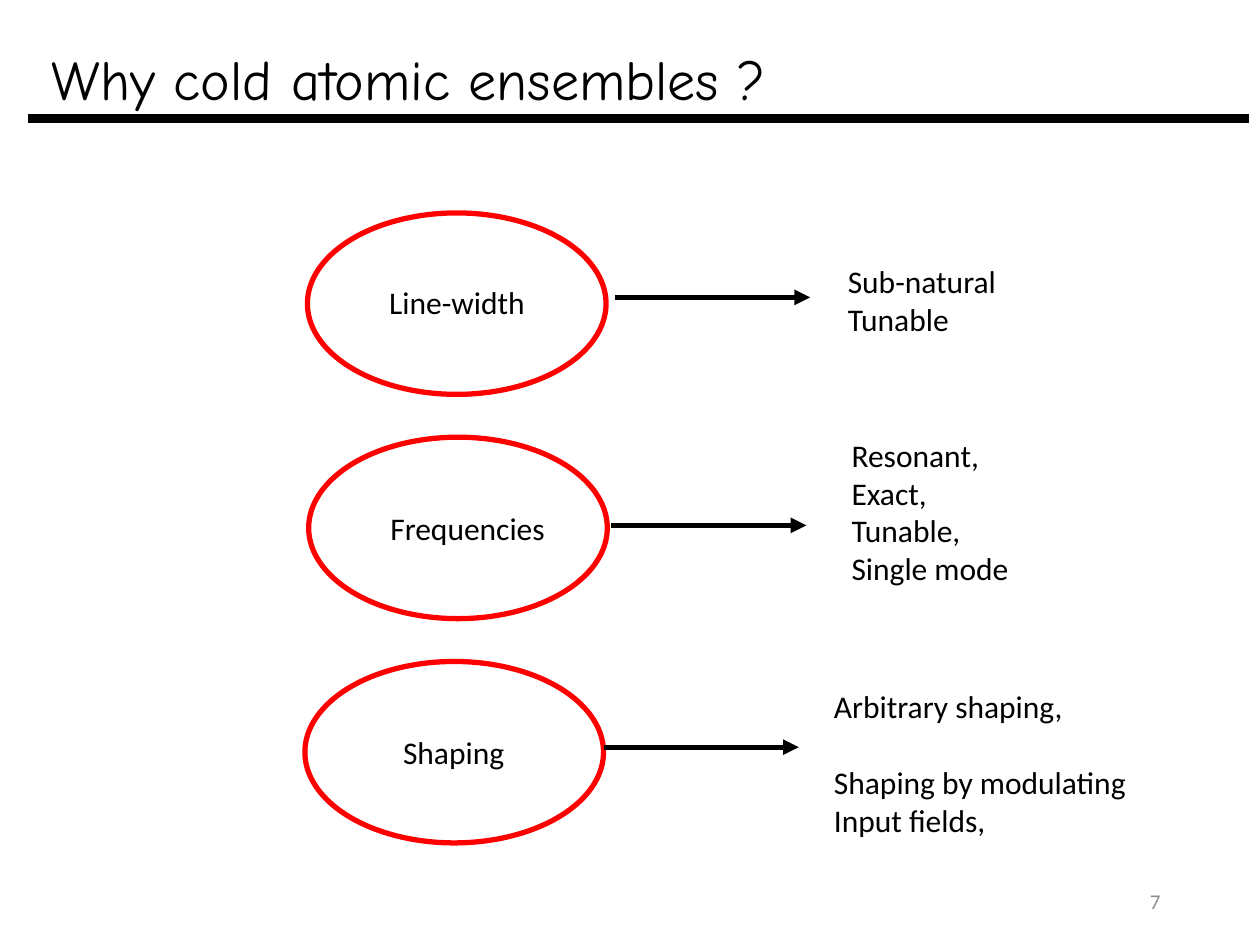
"""Build the slide that lists the advantages of cold atomic ensembles."""
from lxml.etree import SubElement
from pptx import Presentation
from pptx.dml.color import RGBColor
from pptx.enum.shapes import MSO_CONNECTOR, MSO_SHAPE
from pptx.enum.text import MSO_ANCHOR, MSO_AUTO_SIZE, PP_ALIGN
from pptx.oxml.ns import qn
from pptx.util import Pt

PX = 9144
COLORS = {"black": "000000", "red": "FF0000", "gray": "8C8C8C"}
TITLE = {"name": "Comic Neue", "size": Pt(32), "bold": False}
BODY = {"name": "Calibri", "size": Pt(18)}
NUMBER = {"name": "Calibri", "size": Pt(12)}
LINE_GAP = Pt(22)


def write_text(shape, box, lines, font, color="black", align=PP_ALIGN.LEFT,
               anchor=MSO_ANCHOR.TOP, grow=True):
    shape.left, shape.top, shape.width, shape.height = [value * PX for value in box]
    frame = shape.text_frame
    frame.text = "\n".join(lines)
    frame.word_wrap = not grow
    frame.auto_size = MSO_AUTO_SIZE.SHAPE_TO_FIT_TEXT if grow else MSO_AUTO_SIZE.NONE
    frame.vertical_anchor = anchor
    for paragraph in frame.paragraphs:
        paragraph.alignment = align
        run_font = paragraph.runs[0].font
        for name, value in font.items():
            setattr(run_font, name, value)
        run_font.color.rgb = RGBColor.from_string(COLORS[color])
    return frame


def add_line(shapes, left, right, y, width, arrow=False):
    line = shapes.add_connector(MSO_CONNECTOR.STRAIGHT, left * PX, y * PX, right * PX, y * PX)
    line.line.color.rgb = RGBColor.from_string(COLORS["black"])
    line.line.width = Pt(width)
    if arrow:
        SubElement(line.line._get_or_add_ln(), qn("a:tailEnd"), type="triangle")
    SubElement(line._element.spPr, qn("a:effectLst"))


presentation = Presentation()
presentation.slide_width = 1000 * PX
presentation.slide_height = 750 * PX
slide = presentation.slides.add_slide(presentation.slide_layouts[5])
shapes = slide.shapes

write_text(shapes.title, (31, 30, 632, 64), ["Why cold atomic ensembles ?"], TITLE)
add_line(shapes, 22, 991, 94, 4.75)

topics = [
    {"label": "Line-width", "ellipse_left": 244, "label_box": (299, 220, 135, 40),
     "arrow": (488, 236), "details_box": (663, 203, 145, 71),
     "details": ["Sub-natural", "Tunable"]},
    {"label": "Frequencies", "ellipse_left": 245, "label_box": (300, 399, 156, 40),
     "arrow": (485, 417), "details_box": (666, 341, 152, 162),
     "details": ["Resonant,", "Exact,", "Tunable,", "Single mode"]},
    {"label": "Shaping", "ellipse_left": 242, "label_box": (310, 577, 119, 40),
     "arrow": (479, 593), "details_box": (652, 540, 255, 162),
     "details": ["Arbitrary shaping,", "Shaping by modulating", "Input fields,"]},
]
for row, topic in enumerate(topics):
    ellipse = shapes.add_shape(MSO_SHAPE.OVAL, topic["ellipse_left"] * PX,
                               (169 + 178 * row) * PX, 237 * PX, 144 * PX)
    ellipse.shadow.inherit = False
    ellipse.fill.background()
    ellipse.line.color.rgb = RGBColor.from_string(COLORS["red"])
    ellipse.line.width = Pt(3)
    write_text(shapes.add_textbox(0, 0, 0, 0), topic["label_box"], [topic["label"]], BODY)
    arrow_left, arrow_y = topic["arrow"]
    add_line(shapes, arrow_left, arrow_left + 155, arrow_y, 3, arrow=True)
    details = write_text(shapes.add_textbox(0, 0, 0, 0), topic["details_box"],
                         topic["details"], BODY)
    if topic["label"] == "Shaping":
        details.paragraphs[1].space_before = LINE_GAP

write_text(shapes.add_textbox(0, 0, 0, 0), (706, 695, 225, 40), ["7"], NUMBER,
           color="gray", align=PP_ALIGN.RIGHT, anchor=MSO_ANCHOR.MIDDLE, grow=False)

presentation.save("out.pptx")
